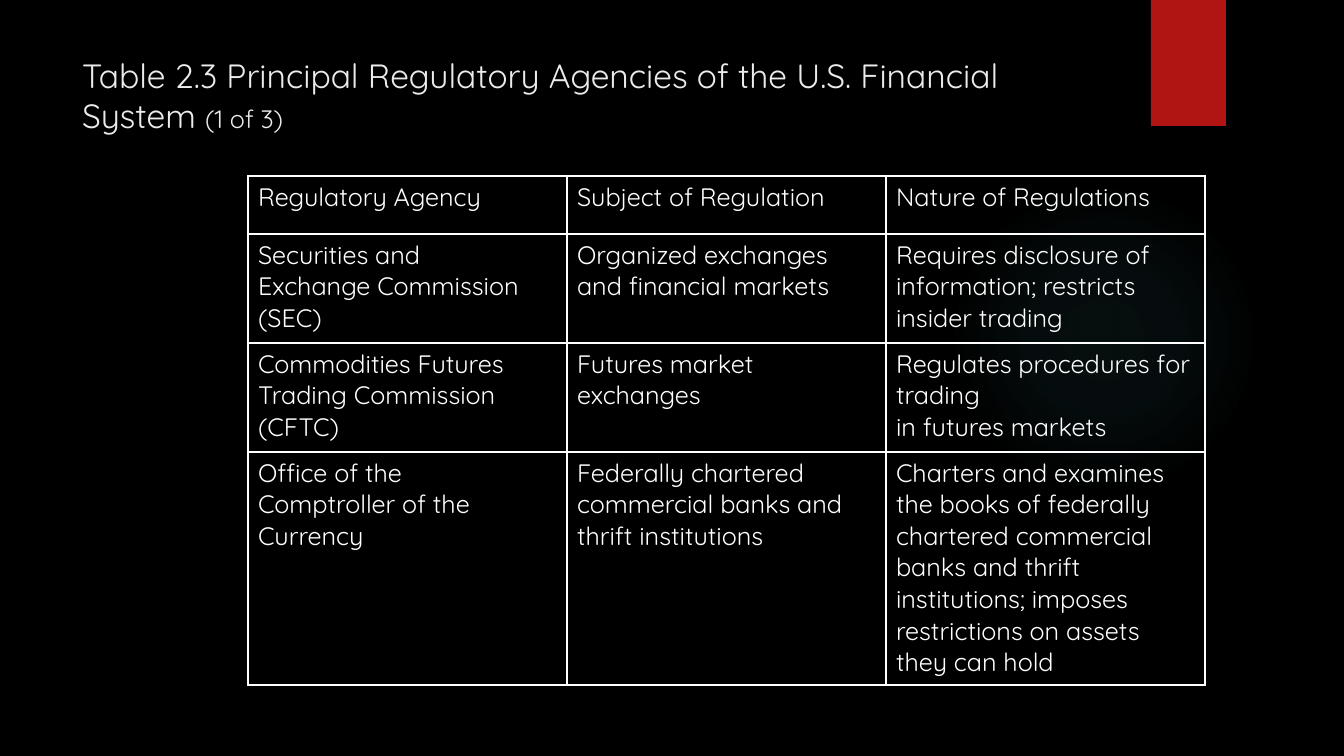
from typing import NamedTuple

import pptx
import pptx.dml.color
import pptx.enum.shapes
import pptx.enum.text
import pptx.oxml
import pptx.oxml.ns
import pptx.util

EMU_PER_PX = 12192000 / 1344
FONT = "Quicksand"
BLACK = pptx.dml.color.RGBColor(0x00, 0x00, 0x00)
WHITE = pptx.dml.color.RGBColor(0xFF, 0xFF, 0xFF)
PALE = pptx.dml.color.RGBColor(0xEB, 0xEB, 0xEB)
RED = pptx.dml.color.RGBColor(0xB0, 0x15, 0x13)
TEAL = pptx.dml.color.RGBColor(0x50, 0xB9, 0xC1)


class Box(NamedTuple):
    left: int
    top: int
    width: int
    height: int


class Stop(NamedTuple):
    position: int
    opacity: int


class Row(NamedTuple):
    height: int
    agency: str
    subject: str
    nature: str


TITLE_BOX = Box(72, 50, 1037, 154)
GLOW_BOX = Box(949, 184, 310, 310)
RIBBON_BOX = Box(1151, 0, 75, 126)
TABLE_BOX = Box(248, 176, 957, 509)
GLOW_STOPS = [Stop(0, 7), Stop(36, 6), Stop(69, 0)]
ROWS = [
    Row(58, "Regulatory Agency", "Subject of Regulation", "Nature of Regulations"),
    Row(109, "Securities and\nExchange Commission (SEC)",
        "Organized exchanges\nand financial markets",
        "Requires disclosure of\ninformation; restricts insider trading"),
    Row(109, "Commodities Futures\nTrading Commission\n(CFTC)",
        "Futures market\nexchanges",
        "Regulates procedures for trading\nin futures markets"),
    Row(233, "Office of the\nComptroller of the\nCurrency",
        "Federally chartered\ncommercial banks and\nthrift institutions",
        "Charters and examines the books of federally chartered commercial banks and thrift\n"
        "institutions; imposes restrictions on assets they can hold"),
]


def px(length: int) -> pptx.util.Emu:
    return pptx.util.Emu(round(length * EMU_PER_PX))


def emu_box(box: Box) -> list[pptx.util.Emu]:
    return [px(length) for length in box]


def style_span(span, size: int, color: pptx.dml.color.RGBColor) -> None:
    span.font.name = FONT
    span.font.size = pptx.util.Pt(size)
    span.font.color.rgb = color


def add_plain_shape(page, kind, box: Box, color: pptx.dml.color.RGBColor):
    shape = page.shapes.add_shape(kind, *emu_box(box))
    shape.shadow.inherit = False
    shape.fill.solid()
    shape.fill.fore_color.rgb = color
    shape.line.fill.background()
    return shape


def make_radial(shape, color: pptx.dml.color.RGBColor, stops: list[Stop]) -> None:
    """Replace the solid fill by a circular fade from the centre."""
    stop_xml = "".join(
        f'<a:gs pos="{stop.position * 1000}"><a:srgbClr val="{color}">'
        f'<a:alpha val="{stop.opacity * 1000}"/></a:srgbClr></a:gs>'
        for stop in stops
    )
    gradient = pptx.oxml.parse_xml(
        f'<a:gradFill {pptx.oxml.ns.nsdecls("a")}><a:gsLst>{stop_xml}</a:gsLst>'
        '<a:path path="circle"><a:fillToRect l="50000" t="50000" r="50000" b="50000"/>'
        "</a:path></a:gradFill>"
    )
    properties = shape.element.spPr
    properties.replace(properties.find(pptx.oxml.ns.qn("a:solidFill")), gradient)


def fill_title(title) -> None:
    title.left, title.top, title.width, title.height = emu_box(TITLE_BOX)
    frame = title.text_frame
    frame.word_wrap = True
    frame.auto_size = pptx.enum.text.MSO_AUTO_SIZE.NONE
    frame.vertical_anchor = pptx.enum.text.MSO_ANCHOR.TOP
    para = frame.paragraphs[0]
    para.alignment = pptx.enum.text.PP_ALIGN.LEFT
    para.text = "Table 2.3 Principal Regulatory Agencies of the U.S. Financial System "
    style_span(para.runs[0], 24, PALE)
    part = para.add_run()
    part.text = "(1 of 3)"
    style_span(part, 18, PALE)


def add_borders(cell, color: pptx.dml.color.RGBColor) -> None:
    properties = cell._tc.get_or_add_tcPr()
    for side in "LRTB":
        properties.append(pptx.oxml.parse_xml(
            f'<a:ln{side} {pptx.oxml.ns.nsdecls("a")} w="{pptx.util.Pt(1)}">'
            f'<a:solidFill><a:srgbClr val="{color}"/></a:solidFill></a:ln{side}>'
        ))


def fill_cell(cell, text: str) -> None:
    add_borders(cell, WHITE)
    cell.fill.background()
    cell.text_frame.text = text
    for para in cell.text_frame.paragraphs:
        for span in para.runs:
            span.font.bold = False
            style_span(span, 18, WHITE)


def add_agency_table(page) -> None:
    table = page.shapes.add_table(len(ROWS), 3, *emu_box(TABLE_BOX)).table
    table.first_row = False
    table.horz_banding = False
    for column in table.columns:
        column.width = px(TABLE_BOX.width // 3)
    for table_row, row in zip(table.rows, ROWS):
        table_row.height = px(row.height)
        for cell, text in zip(table_row.cells, (row.agency, row.subject, row.nature)):
            fill_cell(cell, text)


def main() -> None:
    deck = pptx.Presentation()
    deck.slide_width, deck.slide_height = px(1344), px(756)
    page = deck.slides.add_slide(deck.slide_layouts[5])
    page.background.fill.solid()
    page.background.fill.fore_color.rgb = BLACK

    shapes = pptx.enum.shapes.MSO_SHAPE
    glow = add_plain_shape(page, shapes.OVAL, GLOW_BOX, TEAL)
    make_radial(glow, TEAL, GLOW_STOPS)
    ribbon = add_plain_shape(page, shapes.RECTANGLE, RIBBON_BOX, RED)
    title = page.shapes.title
    ribbon.element.addnext(title.element)
    fill_title(title)
    add_agency_table(page)
    deck.save("out.pptx")


if __name__ == "__main__":
    main()
